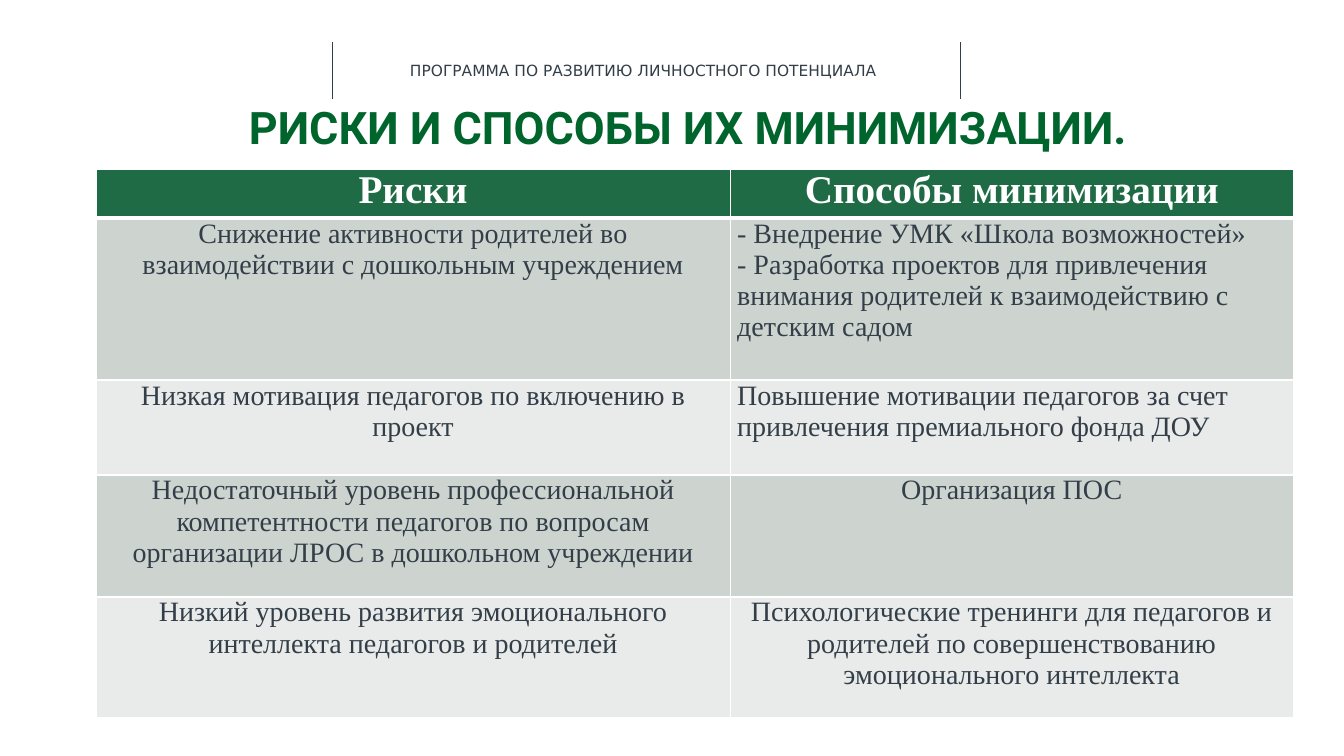
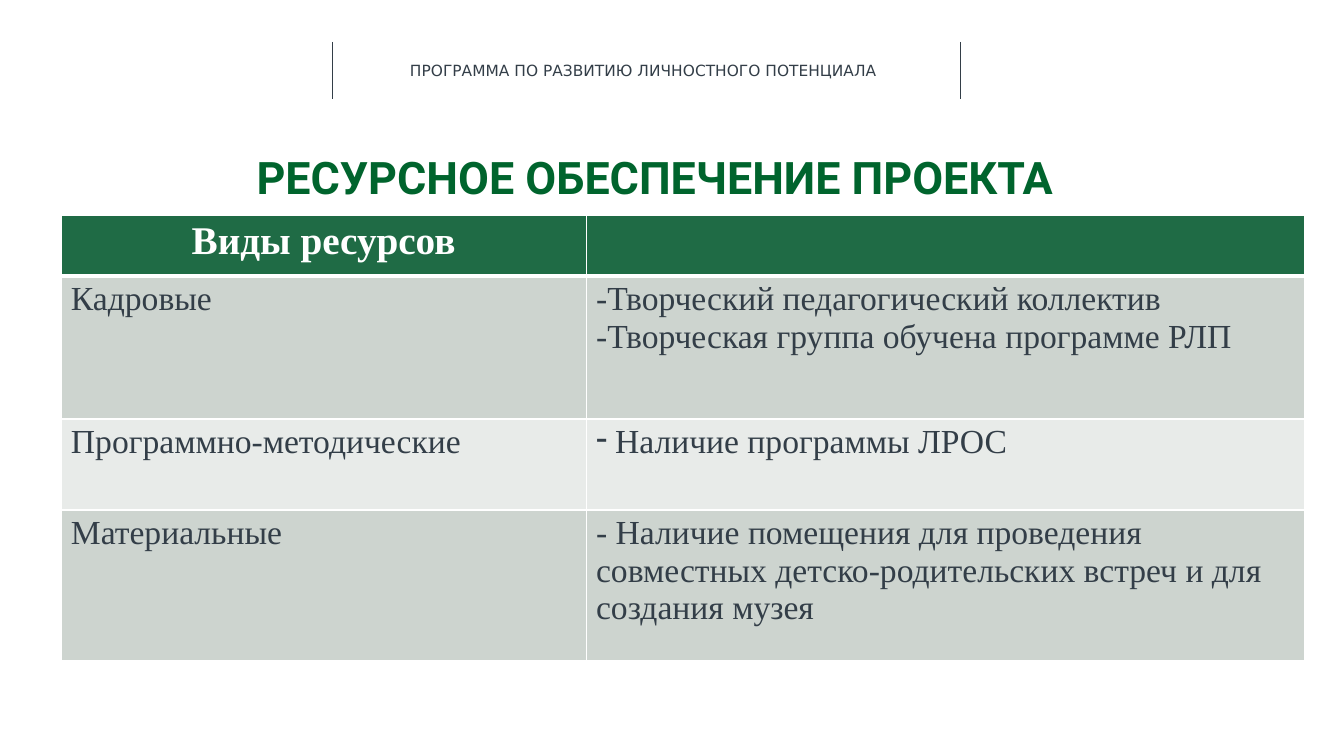
import pptx
import pptx.dml.color
import pptx.enum.shapes
import pptx.enum.text
import pptx.oxml.ns
import pptx.util
import lxml.etree

EMU_PER_PX = 914400 / 100.8
COLORS = {"text": "333E48", "title": "00642D", "head": "1F6B45",
          "odd": "CDD4CF", "even": "E8EBE9", "white": "FFFFFF"}
ALIGN = {"left": pptx.enum.text.PP_ALIGN.LEFT,
         "center": pptx.enum.text.PP_ALIGN.CENTER,
         "bullet": pptx.enum.text.PP_ALIGN.LEFT}
BULLET_INDENT = 19

# Content: each cell is an alignment and its paragraphs
PAGES = [
    {
        "title": "РИСКИ И СПОСОБЫ ИХ МИНИМИЗАЦИИ.",
        "title_box": (63, 100, 1250, 54),
        "origin": (96, 169), "columns": (634, 563),
        "rows": (49, 162, 95, 122, 121),
        "margins": (7, 0), "size": 20,
        "cells": [
            [("center", ["Риски"]), ("center", ["Способы минимизации"])],
            [("center", ["Снижение активности родителей во взаимодействии с дошкольным учреждением"]),
             ("left", ["- Внедрение УМК «Школа возможностей»",
                       "- Разработка проектов для привлечения внимания родителей к взаимодействию с детским садом"])],
            [("center", ["Низкая мотивация педагогов по включению в проект"]),
             ("left", ["Повышение мотивации педагогов за счет привлечения премиального фонда ДОУ"])],
            [("center", ["Недостаточный уровень профессиональной компетентности педагогов "
                         "по вопросам организации ЛРОС в дошкольном учреждении"]),
             ("center", ["Организация ПОС"])],
            [("center", ["Низкий уровень развития эмоционального интеллекта педагогов и родителей"]),
             ("center", ["Психологические тренинги для педагогов и родителей "
                         "по совершенствованию эмоционального интеллекта"])],
        ],
    },
    {
        "title": "РЕСУРСНОЕ ОБЕСПЕЧЕНИЕ ПРОЕКТА",
        "title_box": (171, 150, 968, 54),
        "origin": (61, 215), "columns": (525, 718),
        "rows": (61, 143, 91, 151),
        "margins": (10, 5), "size": 24,
        "cells": [
            [("center", ["Виды ресурсов"]), ("left", [])],
            [("left", ["Кадровые"]),
             ("left", ["-Творческий педагогический коллектив",
                       "-Творческая группа обучена программе РЛП"])],
            [("left", ["Программно-методические"]),
             ("bullet", ["Наличие программы ЛРОС"])],
            [("left", ["Материальные"]),
             ("left", ["- Наличие помещения для проведения совместных "
                       "детско-родительских встреч и для создания музея"])],
        ],
    },
]


def px(length):
    return pptx.util.Emu(round(length * EMU_PER_PX))


def style(font, name, size, color, bold=False):
    font.name = name
    font.size = pptx.util.Pt(size)
    font.bold = bold
    font.color.rgb = pptx.dml.color.RGBColor.from_string(COLORS[color])


deck = pptx.Presentation()
deck.slide_width = pptx.util.Inches(13.33)
deck.slide_height = pptx.util.Inches(7.5)
layout = deck.slide_layouts[5]
pages = [deck.slides.add_slide(layout) for _ in PAGES]

# Shared header: drawn once, then moved to the layout
shapes = pages[0].shapes
header = shapes.add_textbox(px(400), px(56), px(491), px(29))
header.text_frame.word_wrap = True
header.text_frame.text = "ПРОГРАММА ПО РАЗВИТИЮ ЛИЧНОСТНОГО ПОТЕНЦИАЛА"
style(header.text_frame.paragraphs[0].font, "DejaVu Sans", 11, "text")
header_parts = [header]
for x in (332, 960):
    rule = shapes.add_connector(pptx.enum.shapes.MSO_CONNECTOR.STRAIGHT,
                                px(x), px(42), px(x), px(99))
    rule.line.width = pptx.util.Pt(0.5)
    rule.line.color.rgb = pptx.dml.color.RGBColor.from_string(COLORS["text"])
    lxml.etree.SubElement(rule.element.spPr, pptx.oxml.ns.qn("a:effectLst"))
    header_parts.append(rule)
for part in header_parts:
    layout.shapes.element.append(part.element)

for page, content in zip(pages, PAGES):
    # Title
    title = page.shapes.title
    title.left, title.top, title.width, title.height = map(px, content["title_box"])
    frame = title.text_frame
    frame.text = content["title"]
    frame.word_wrap = True
    frame.vertical_anchor = pptx.enum.text.MSO_ANCHOR.TOP
    frame.margin_left = frame.margin_right = frame.margin_top = frame.margin_bottom = 0
    frame.paragraphs[0].alignment = ALIGN["center"]
    style(frame.paragraphs[0].font, "Roboto", 32, "title", True)

    # Table grid
    rows, columns = content["rows"], content["columns"]
    left, top = content["origin"]
    table = page.shapes.add_table(len(rows), len(columns), px(left), px(top),
                                  px(sum(columns)), px(sum(rows))).table
    for column, width in zip(table.columns, columns):
        column.width = px(width)
    for row, height in zip(table.rows, rows):
        row.height = px(height)

    # Table cells
    side, edge = content["margins"]
    for r, row_cells in enumerate(content["cells"]):
        band = "head" if r == 0 else "odd" if r % 2 else "even"
        for c, (align, lines) in enumerate(row_cells):
            cell = table.cell(r, c)
            cell.margin_left = cell.margin_right = px(side)
            cell.margin_top = cell.margin_bottom = px(edge)

            # White borders, thicker under the heading row
            properties = cell._tc.get_or_add_tcPr()
            thick = {0: "lnB", 1: "lnT"}.get(r)
            for name in ("lnL", "lnR", "lnT", "lnB"):
                border = lxml.etree.SubElement(properties, pptx.oxml.ns.qn("a:" + name))
                border.set("w", str(pptx.util.Pt(3 if name == thick else 1)))
                fill = lxml.etree.SubElement(border, pptx.oxml.ns.qn("a:solidFill"))
                lxml.etree.SubElement(fill, pptx.oxml.ns.qn("a:srgbClr"), val=COLORS["white"])
            cell.fill.solid()
            cell.fill.fore_color.rgb = pptx.dml.color.RGBColor.from_string(COLORS[band])

            cell.text_frame.text = "\n".join(lines)
            for para in cell.text_frame.paragraphs:
                para.alignment = ALIGN[align]
                if align == "bullet":
                    para_properties = para._p.get_or_add_pPr()
                    para_properties.set("marL", str(px(BULLET_INDENT)))
                    para_properties.set("indent", str(-px(BULLET_INDENT)))
                    lxml.etree.SubElement(para_properties, pptx.oxml.ns.qn("a:buChar"), char="-")
                if r == 0:
                    style(para.font, "Times New Roman", 28, "white", True)
                else:
                    style(para.font, "Times New Roman", content["size"], "text")

deck.save("out.pptx")
